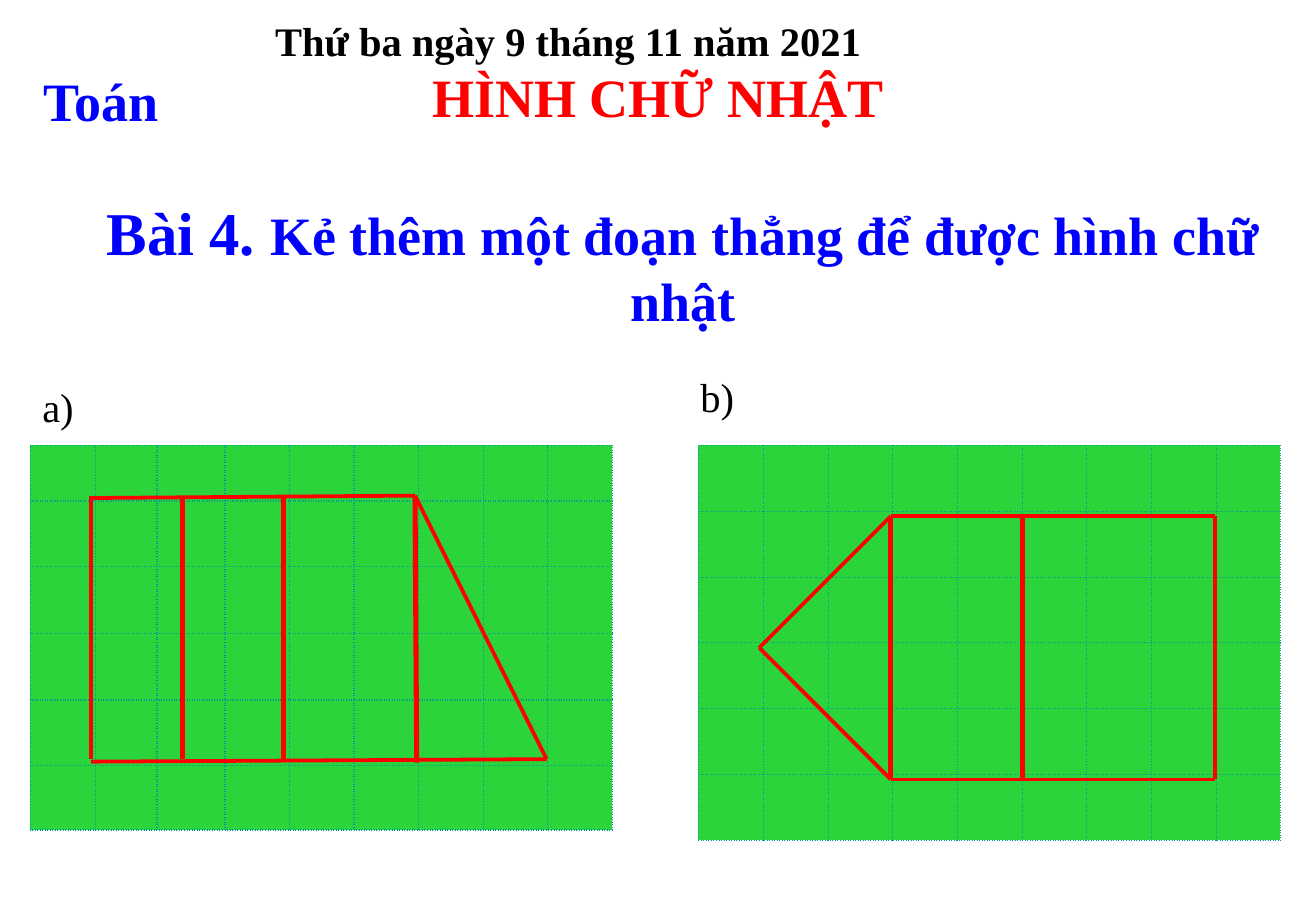
import pptx
import pptx.util
import pptx.dml.color
import pptx.enum.shapes
import pptx.enum.text
import pptx.oxml
import pptx.oxml.ns

Pt = pptx.util.Pt
RGBColor = pptx.dml.color.RGBColor
PP_ALIGN = pptx.enum.text.PP_ALIGN
MSO_ANCHOR = pptx.enum.text.MSO_ANCHOR

BLUE = RGBColor(0x00, 0x00, 0xFF)
RED = RGBColor(0xFF, 0x00, 0x00)
BLACK = RGBColor(0x00, 0x00, 0x00)
GREEN = RGBColor(0x2C, 0xD4, 0x3C)
TEAL = RGBColor(0x00, 0x99, 0x99)
FONT = "Times New Roman"


def add_text(sp, box, runs, color, bold, align, anchor):
    """Place a text shape and fill its paragraph with (text, size) runs."""
    sp.left, sp.top, sp.width, sp.height = map(Pt, box)
    tf = sp.text_frame
    frame_format = {"word_wrap": True, "vertical_anchor": anchor,
                    "auto_size": pptx.enum.text.MSO_AUTO_SIZE.NONE}
    for name, value in frame_format.items():
        setattr(tf, name, value)
    p = tf.paragraphs[0]
    p.alignment = align
    for text, size in runs:
        r = p.add_run()
        r.text = text
        for name, value in {"name": FONT, "size": Pt(size), "bold": bold}.items():
            setattr(r.font, name, value)
        r.font.color.rgb = color


def add_segment(shapes, start, end, width):
    line = shapes.add_connector(pptx.enum.shapes.MSO_CONNECTOR.STRAIGHT,
                                *map(Pt, start + end))
    line.line.color.rgb = RED
    line.line.width = Pt(width)
    line._element.spPr.append(pptx.oxml.parse_xml(
        f"<a:effectLst {pptx.oxml.ns.nsdecls('a')}/>"))


prs = pptx.Presentation()
prs.slide_width, prs.slide_height = Pt(780), Pt(540)
s = prs.slides.add_slide(prs.slide_layouts[5])

add_text(s.shapes.title, (54, 126, 702, 60),
         [("Bài 4. ", 36), ("Kẻ thêm một đoạn thẳng để được hình chữ nhật", 32)],
         BLUE, True, PP_ALIGN.CENTER, MSO_ANCHOR.MIDDLE)

# Dotted grids: left edge, column widths, row heights, border width
grids = [
    (18, [38.5, 36.5, 40.5] + [38.25] * 6, [33, 39, 39.5, 39.5, 39, 38], 1),
    (414, [38.33] * 9, [39] * 6, 0.25),
]
for left, widths, heights, border in grids:
    table = s.shapes.add_table(len(heights), len(widths), Pt(left), Pt(264),
                               Pt(sum(widths)), Pt(sum(heights))).table
    table.first_row = table.horz_banding = False
    for column, width in zip(table.columns, widths):
        column.width = Pt(width)
    for row, height in zip(table.rows, heights):
        row.height = Pt(height)
    for cell in table.iter_cells():
        cell.fill.solid()
        cell.fill.fore_color.rgb = GREEN
        tcPr = cell._tc.get_or_add_tcPr()
        for i, side in enumerate(("lnL", "lnR", "lnT", "lnB")):
            tcPr.insert(i, pptx.oxml.parse_xml(
                f'<a:{side} {pptx.oxml.ns.nsdecls("a")} w="{Pt(border)}">'
                f'<a:solidFill><a:srgbClr val="{TEAL}"/></a:solidFill>'
                f'<a:prstDash val="sysDot"/></a:{side}>'))

# Outlines of the two figures
trapezoid = [((54, 295.2), (246, 293.8)), ((246, 293.8), (324, 450)),
             ((54, 294), (54, 450)), ((54, 451.5), (324, 450))]
corners = [(450, 384), (528, 306), (720, 306), (720, 462), (528, 462)]
pentagon = list(zip(corners, corners[1:] + corners[:1]))
for outline in (trapezoid, pentagon):
    group = s.shapes.add_group_shape()
    for start, end in outline:
        add_segment(group.shapes, start, end, 2.25)

# Upright dividers: top x, bottom x, top y, bottom y
dividers = [(246, 247, 294, 452), (528, 528, 306, 462), (168, 168, 294, 450),
            (606, 606, 306, 462), (108, 108, 294, 450)]
for x1, x2, top, bottom in dividers:
    add_segment(s.shapes, (x1, top), (x2, bottom), 3)

labels = [
    ("HÌNH CHỮ NHẬT", (36, 0, 708, 114), 32, RED, True, PP_ALIGN.CENTER, MSO_ANCHOR.MIDDLE),
    ("a)", (18, 223, 36, 36), 24, BLACK, False, PP_ALIGN.LEFT, MSO_ANCHOR.TOP),
    ("b)", (408, 217, 48, 36), 24, BLACK, False, PP_ALIGN.LEFT, MSO_ANCHOR.TOP),
    ("Thứ ba ngày 9 tháng 11 năm 2021", (156, 6, 546, 36.5), 24, BLACK, True,
     PP_ALIGN.LEFT, MSO_ANCHOR.TOP),
    ("Toán", (-6, 40.5, 132, 38), 32, BLUE, True, PP_ALIGN.CENTER, MSO_ANCHOR.MIDDLE),
]
for text, box, size, color, bold, align, anchor in labels:
    sp = s.shapes.add_textbox(*map(Pt, box))
    add_text(sp, box, [(text, size)], color, bold, align, anchor)

prs.save("out.pptx")
